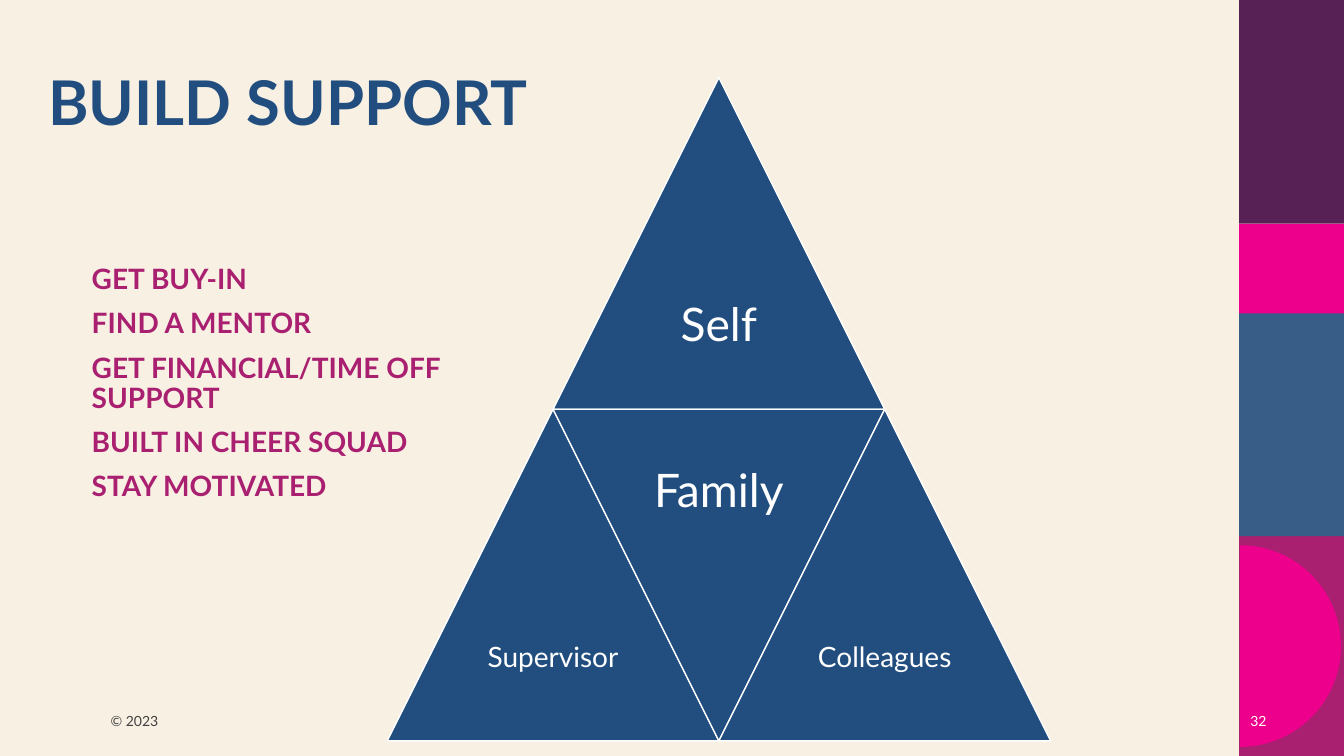
from math import cos, pi, sin

from lxml import etree
from pptx import Presentation
from pptx.dml.color import RGBColor
from pptx.enum.shapes import MSO_SHAPE as Shape
from pptx.enum.text import MSO_ANCHOR as Anchor, MSO_AUTO_SIZE as AutoSize, PP_ALIGN as Align
from pptx.oxml.ns import qn
from pptx.util import Inches, Pt

COLORS = {
    "cream": "F8F0E3",
    "navy": "224E7F",
    "berry": "AA2070",
    "steel": "385E88",
    "plum": "582156",
    "pink": "EC008C",
    "gray": "404040",
    "white": "FFFFFF",
}
SLIDE_W, SLIDE_H = 13.33, 7.5


def rgb(name):
    """Return the named palette colour."""
    return RGBColor.from_string(COLORS[name])


def add_run(p, text, size, color, bold=False):
    """Add one formatted run to a paragraph."""
    r = p.add_run()
    r.text = text
    r.font.name = "Lato"
    r.font.size = Pt(size)
    r.font.bold = bold
    r.font.color.rgb = rgb(color)


def place(sp, x, y, w, h):
    """Move a shape to the given box."""
    sp.left, sp.top, sp.width, sp.height = (Inches(v) for v in (x, y, w, h))


def paint(sp, color, line=None):
    """Set fill and outline and drop the shadow."""
    sp.shadow.inherit = False
    sp.fill.solid()
    sp.fill.fore_color.rgb = rgb(color)
    if line:
        sp.line.color.rgb = rgb(line)
        sp.line.width = Pt(1)
    else:
        sp.line.fill.background()


def add_side_band(s, x, y, w, h):
    """Draw the coloured blocks and the half disc at the right edge."""
    blocks = [(5.28, h - 5.28, "berry"), (3.1, 2.22, "steel"), (0, 2.22, "plum"), (2.22, 0.89, "pink")]
    for top, height, color in blocks:
        sp = s.shapes.add_shape(Shape.RECTANGLE, Inches(x), Inches(y + top), Inches(w), Inches(height))
        paint(sp, color)
    cx, cy, radius, steps = x + 0.01, y + 6.41, 1, 90
    angles = [pi * i / steps - pi / 2 for i in range(steps + 1)]
    arc = [(Inches(cx + radius * cos(a)), Inches(cy + radius * sin(a))) for a in angles]
    builder = s.shapes.build_freeform(*arc[0])
    builder.add_line_segments(arc[1:], close=True)
    paint(builder.convert_to_shape(), "pink")


def add_title(s, text, x, y, w, h):
    """Fill the title placeholder."""
    sp = s.shapes.title
    place(sp, x, y, w, h)
    tf = sp.text_frame
    tf.auto_size = AutoSize.NONE
    tf.vertical_anchor = Anchor.TOP
    p = tf.paragraphs[0]
    p.alignment = Align.LEFT
    p.line_spacing = 0.9
    add_run(p, text, 44, "navy", True)


def add_list(s, items, x, y, w, h):
    """Fill the body placeholder with an unbulleted list."""
    sp = s.placeholders[1]
    place(sp, x, y, w, h)
    tf = sp.text_frame
    tf.auto_size = AutoSize.NONE
    tf.vertical_anchor = Anchor.MIDDLE
    for i, item in enumerate(items):
        p = tf.add_paragraph() if i else tf.paragraphs[0]
        p.line_spacing = 0.9
        p.space_before = Pt(10 if i else 0)
        pPr = p._p.get_or_add_pPr()
        pPr.set("marL", "0")
        pPr.set("indent", "0")
        etree.SubElement(pPr, qn("a:buNone"))
        add_run(p, item, 20, "berry", True)


def add_pyramid(s, x, y, side):
    """Draw four labelled triangles that form one large triangle."""
    half = side / 2
    parts = [
        ("Self", 33, Shape.ISOSCELES_TRIANGLE, 0.5, 0),
        ("Supervisor", 20, Shape.ISOSCELES_TRIANGLE, 0, 1),
        ("Family", 33, Shape.FLOWCHART_MERGE, 0.5, 1),
        ("Colleagues", 20, Shape.ISOSCELES_TRIANGLE, 1, 1),
    ]
    for label, size, kind, col, row in parts:
        sp = s.shapes.add_shape(
            kind, Inches(x + col * half), Inches(y + row * half), Inches(half), Inches(half))
        paint(sp, "navy", "white")
        tf = sp.text_frame
        tf.word_wrap = True
        tf.vertical_anchor = Anchor.MIDDLE
        tf.margin_left = tf.margin_right = tf.margin_top = tf.margin_bottom = Inches(0.08)
        p = tf.paragraphs[0]
        p.alignment = Align.CENTER
        p.line_spacing = 0.9
        add_run(p, label, size, "white")


def add_footer(s, text, color, align, x, y, w, h):
    """Add one small footer text."""
    tf = s.shapes.add_textbox(Inches(x), Inches(y), Inches(w), Inches(h)).text_frame
    tf.word_wrap = True
    tf.vertical_anchor = Anchor.MIDDLE
    p = tf.paragraphs[0]
    p.alignment = align
    add_run(p, text, 10, color)


def main():
    """Build and save the slide."""
    prs = Presentation()
    prs.slide_width, prs.slide_height = Inches(SLIDE_W), Inches(SLIDE_H)
    s = prs.slides.add_slide(prs.slide_layouts[1])
    s.background.fill.solid()
    s.background.fill.fore_color.rgb = rgb("cream")
    add_side_band(s, 12.29, 0, SLIDE_W - 12.29, SLIDE_H)
    add_title(s, "BUILD SUPPORT", 0.38, 0.67, 9.98, 1.45)
    items = ["GET BUY-IN", "FIND A MENTOR", "GET FINANCIAL/TIME OFF SUPPORT",
             "BUILT IN CHEER SQUAD", "STAY MOTIVATED"]
    add_list(s, items, 0.81, 3.56, 4.7, 0.5)
    add_footer(s, "© 2023", "gray", Align.LEFT, 1, 6.95, 1.2, 0.4)
    add_footer(s, "32", "white", Align.RIGHT, 12.16, 6.95, 0.5, 0.4)
    add_pyramid(s, 3.84, 0.77, 6.58)
    prs.save("out.pptx")


if __name__ == "__main__":
    main()
